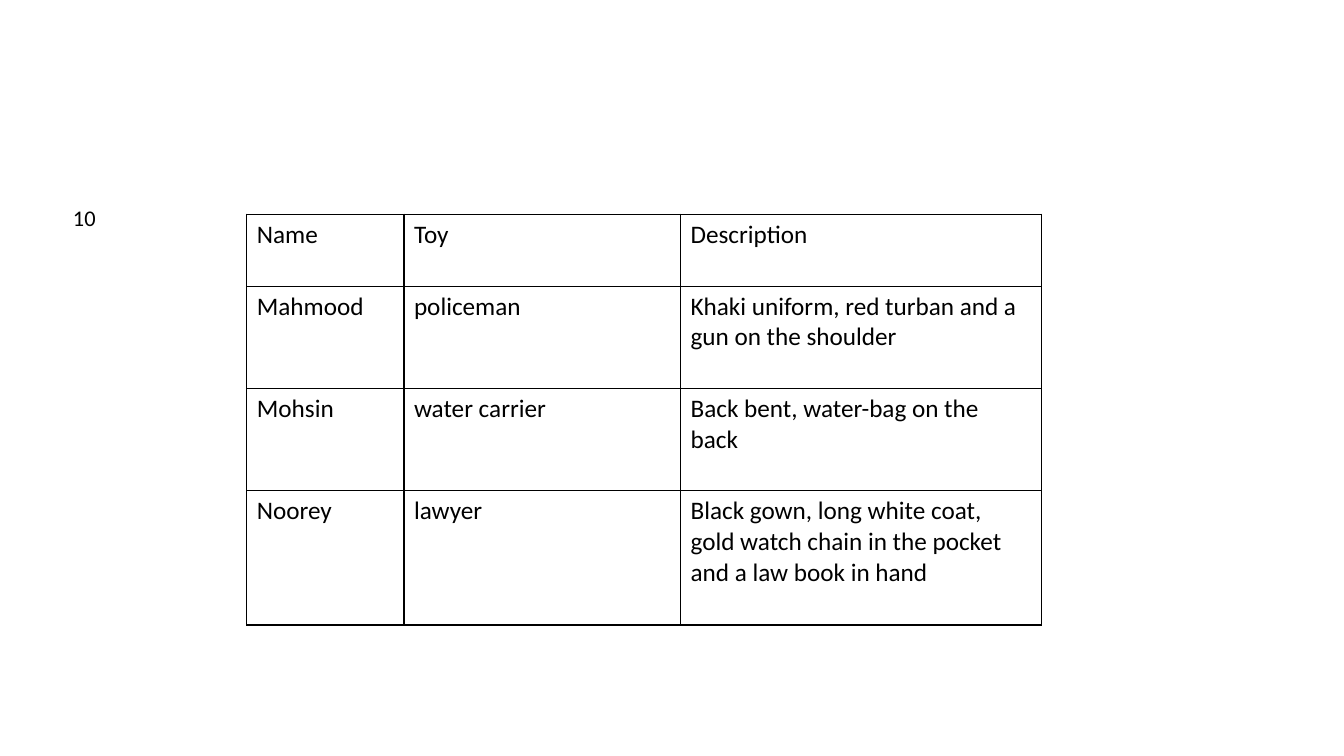
"""Build a slide with a numbered table of children's toys."""
from pptx import Presentation
from pptx.dml.color import RGBColor
from pptx.oxml import parse_xml
from pptx.oxml.ns import nsdecls
from pptx.util import Cm, Pt

NUMBER = "10"
ROWS = [
    ("Name", "Toy", "Description"),
    ("Mahmood", "policeman", "Khaki uniform, red turban and a gun on the shoulder"),
    ("Mohsin", "water carrier", "Back bent, water-bag on the back"),
    ("Noorey", "lawyer",
     "Black gown, long white coat, gold watch chain in the pocket\nand a law book in hand"),
]
COL_WIDTHS = [3.96, 6.97, 9.09]
ROW_HEIGHTS = [1.81, 2.58, 2.58, 3.38]
COLORS = {"ink": "000000"}
BORDER = Pt(1)


def write(tf, text, size):
    """Fill a text frame and format every paragraph."""
    tf.text = text
    fmt = {"name": "Calibri", "size": Pt(size), "bold": False}
    for p in tf.paragraphs:
        for r in p.runs:
            for key, value in fmt.items():
                setattr(r.font, key, value)
            r.font.color.rgb = RGBColor.from_string(COLORS["ink"])


def add_borders(cell):
    """Draw all four sides of a table cell."""
    props = cell._tc.get_or_add_tcPr()
    for i, side in enumerate(("lnL", "lnR", "lnT", "lnB")):
        props.insert(i, parse_xml(
            f'<a:{side} {nsdecls("a")} w="{BORDER}"><a:solidFill>'
            f'<a:srgbClr val="{COLORS["ink"]}"/></a:solidFill></a:{side}>'))


def add_number(s):
    """Place the question number beside the table."""
    tf = s.shapes.add_textbox(Cm(1.15), Cm(4.27), Cm(31.55), Cm(14.07)).text_frame
    fmt = {"word_wrap": True, "margin_left": Cm(0.69), "margin_right": Cm(0.25),
           "margin_top": Cm(1.04), "margin_bottom": Cm(0.25)}
    for key, value in fmt.items():
        setattr(tf, key, value)
    write(tf, NUMBER, 16)
    tf.paragraphs[0].line_spacing = 1.15


def add_toys(s):
    """Place the bordered table of names, toys and descriptions."""
    table = s.shapes.add_table(
        len(ROWS), len(COL_WIDTHS), Cm(6.22), Cm(5.4),
        Cm(sum(COL_WIDTHS)), Cm(sum(ROW_HEIGHTS))).table
    table.first_row = table.horz_banding = False
    for col, width in zip(table.columns, COL_WIDTHS):
        col.width = Cm(width)
    for row, height, texts in zip(table.rows, ROW_HEIGHTS, ROWS):
        row.height = Cm(height)
        for cell, text in zip(row.cells, texts):
            cell.fill.background()
            write(cell.text_frame, text, 18)
            add_borders(cell)


def main():
    """Create and save the slide."""
    prs = Presentation()
    prs.slide_width, prs.slide_height = Cm(33.87), Cm(19.05)
    s = prs.slides.add_slide(prs.slide_layouts[6])
    add_number(s)
    add_toys(s)
    prs.save("out.pptx")


if __name__ == "__main__":
    main()
